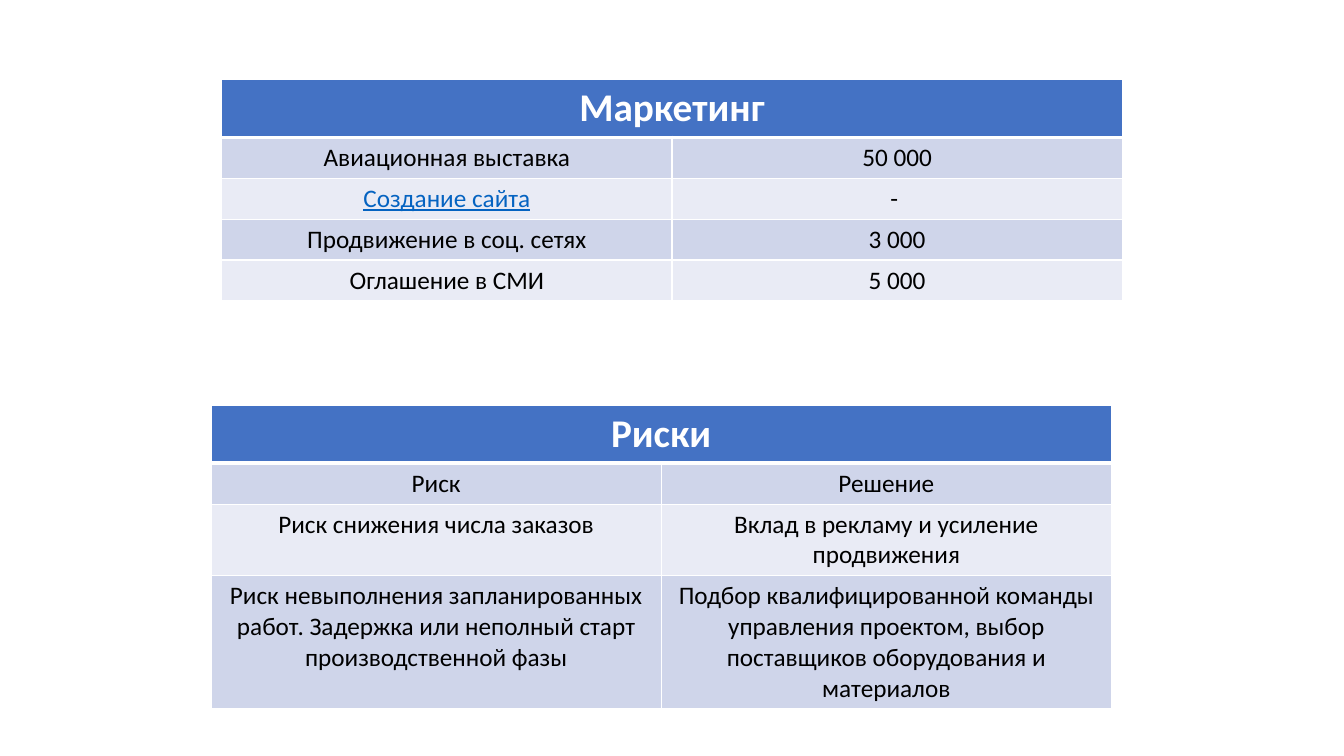
import lxml.etree
import pptx
import pptx.dml.color
import pptx.enum.text
import pptx.oxml.ns
import pptx.util

RGBColor = pptx.dml.color.RGBColor
WHITE = RGBColor(0xFF, 0xFF, 0xFF)
BLACK = RGBColor(0x00, 0x00, 0x00)
BLUE = RGBColor(0x44, 0x72, 0xC4)
LINK_BLUE = RGBColor(0x05, 0x63, 0xC1)
BAND_DARK = RGBColor(0xCF, 0xD5, 0xEA)
BAND_LIGHT = RGBColor(0xE9, 0xEB, 0xF5)

MARKETING = [
    ("Авиационная выставка", "50 000"),
    ("Создание сайта", "- "),
    ("Продвижение в соц. сетях", "3 000"),
    ("Оглашение в СМИ", "5 000"),
]
RISKS = [
    ("Риск", "Решение"),
    ("Риск снижения числа заказов", "Вклад в рекламу и усиление продвижения"),
    (
        "Риск невыполнения запланированных работ. Задержка или неполный старт производственной фазы",
        "Подбор квалифицированной команды управления проектом, выбор поставщиков оборудования и материалов",
    ),
]
LINK_LOOK = {"Создание сайта": {"color": LINK_BLUE, "underline": True}}


def write_text(frame, text, size=18, color=BLACK, bold=False, underline=False):
    para = frame.paragraphs[0]
    para.alignment = pptx.enum.text.PP_ALIGN.CENTER
    span = para.add_run()
    span.text = text
    span.font.name = "Calibri"
    span.font.size = pptx.util.Pt(size)
    span.font.color.rgb = color
    span.font.bold = bold
    span.font.underline = underline


class TableSlide:
    TABLE_WIDTH = 67
    HEADER_HEIGHT = 7.6
    LINE_HEIGHT = 5.4

    def __init__(self, deck):
        self.deck = deck
        self.page = deck.slides.add_slide(deck.slide_layouts[6])

    def across(self, percent):
        return round(self.deck.slide_width * percent / 100)

    def down(self, percent):
        return round(self.deck.slide_height * percent / 100)

    def style_cell(self, cell, fill, bottom=1):
        properties = cell._tc.get_or_add_tcPr()
        for side, width in (("L", 1), ("R", 1), ("T", 1), ("B", bottom)):
            line = lxml.etree.SubElement(
                properties, pptx.oxml.ns.qn(f"a:ln{side}"), w=str(pptx.util.Pt(width))
            )
            solid = lxml.etree.SubElement(line, pptx.oxml.ns.qn("a:solidFill"))
            lxml.etree.SubElement(solid, pptx.oxml.ns.qn("a:srgbClr"), val=str(WHITE))
        cell.fill.solid()
        cell.fill.fore_color.rgb = fill

    def add_table(self, title, entries, left, top, heights):
        heights = [self.HEADER_HEIGHT, *heights]
        table = self.page.shapes.add_table(
            len(heights), 2, self.across(left), self.down(top),
            self.across(self.TABLE_WIDTH), self.down(sum(heights)),
        ).table
        for row, height in zip(table.rows, heights):
            row.height = self.down(height)
        for cell in table.rows[0].cells:
            self.style_cell(cell, BLUE, bottom=3)
        table.cell(0, 0).merge(table.cell(0, 1))
        write_text(table.cell(0, 0).text_frame, title, size=28, color=WHITE, bold=True)
        for index, entry in enumerate(entries, 1):
            for column, text in enumerate(entry):
                cell = table.cell(index, column)
                self.style_cell(cell, BAND_DARK if index % 2 else BAND_LIGHT)
                write_text(cell.text_frame, text, **LINK_LOOK.get(text, {}))


def main():
    deck = pptx.Presentation()
    deck.slide_width = pptx.util.Inches(13.33)
    deck.slide_height = pptx.util.Inches(7.5)
    slide = TableSlide(deck)
    line = slide.LINE_HEIGHT
    slide.add_table("Маркетинг", MARKETING, 16.5, 10.5, [line] * len(MARKETING))
    slide.add_table("Риски", RISKS, 15.7, 53.6, [line, 9.4, 17.2])
    deck.save("out.pptx")


if __name__ == "__main__":
    main()
